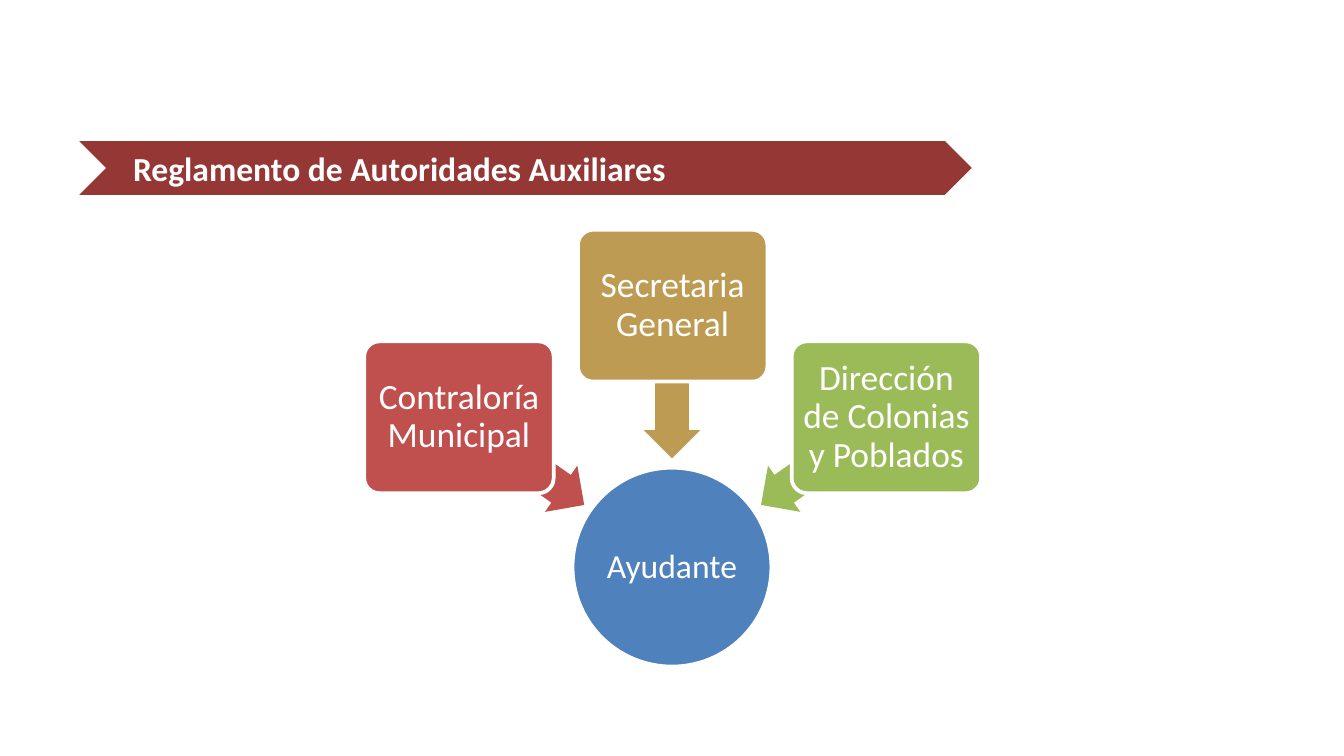
from pptx import Presentation
from pptx.dml.color import RGBColor
from pptx.enum.shapes import MSO_SHAPE
from pptx.enum.text import MSO_ANCHOR, MSO_AUTO_SIZE, PP_ALIGN
from pptx.util import Inches, Pt

WHITE = RGBColor(0xFF, 0xFF, 0xFF)
MAROON = RGBColor(0x95, 0x37, 0x35)
BLUE = RGBColor(0x4F, 0x81, 0xBD)
RED = RGBColor(0xC0, 0x50, 0x4D)
GOLD = RGBColor(0xBD, 0x9B, 0x53)
GREEN = RGBColor(0x9B, 0xBB, 0x59)

BOX_W, BOX_H = 1.41, 1.13
ARROW_W, ARROW_H = 1.14, 0.42

# text, colour, box left and top, arrow left and top, arrow rotation
OFFICES = [
    ("Contraloría Municipal", RED, 2.71, 2.54, 3.31, 3.22, 215),
    ("Secretaria General", GOLD, 4.3, 1.71, 4.43, 2.63, 270),
    ("Dirección de Colonias y Poblados", GREEN, 5.89, 2.54, 5.56, 3.22, 325),
]


def add_filled(shapes, kind, x, y, w, h, color, outlined=False):
    sp = shapes.add_shape(kind, Inches(x), Inches(y), Inches(w), Inches(h))
    sp.shadow.inherit = False
    sp.fill.solid()
    sp.fill.fore_color.rgb = color
    if outlined:
        sp.line.color.rgb = WHITE
        sp.line.width = Pt(2)
    else:
        sp.line.fill.background()
    return sp


def add_run(p, text, size, bold=False):
    r = p.add_run()
    r.text = text
    r.font.name = "Calibri"
    r.font.size = Pt(size)
    r.font.bold = bold
    r.font.color.rgb = WHITE


def set_centred_text(sp, text, size, inset):
    tf = sp.text_frame
    tf.word_wrap = True
    tf.vertical_anchor = MSO_ANCHOR.MIDDLE
    tf.margin_left = tf.margin_right = Inches(inset)
    tf.margin_top = tf.margin_bottom = Inches(inset)
    p = tf.paragraphs[0]
    p.alignment = PP_ALIGN.CENTER
    p.line_spacing = 0.9
    add_run(p, text, size)


def add_title(shapes, text):
    sp = add_filled(shapes, MSO_SHAPE.CHEVRON, 0.59, 1.05, 6.64, 0.4, MAROON)
    tf = sp.text_frame
    tf.word_wrap = True
    tf.auto_size = MSO_AUTO_SIZE.SHAPE_TO_FIT_TEXT
    tf.vertical_anchor = MSO_ANCHOR.TOP
    tf.margin_left = Inches(0.2)
    p = tf.paragraphs[0]
    p.alignment = PP_ALIGN.LEFT
    add_run(p, text, 18, bold=True)


def add_hub(shapes, text):
    sp = add_filled(shapes, MSO_SHAPE.OVAL, 4.26, 3.48, 1.48, 1.48, BLUE, outlined=True)
    set_centred_text(sp, text, 18, 0.01)


def add_office(shapes, text, color, x, y, arrow_x, arrow_y, rotation):
    """Add an arrow towards the hub and the box it starts from."""
    arrow = add_filled(shapes, MSO_SHAPE.LEFT_ARROW, arrow_x, arrow_y,
                       ARROW_W, ARROW_H, color)
    arrow.adjustments[0] = 0.6
    arrow.adjustments[1] = 0.5
    arrow.rotation = rotation
    box = add_filled(shapes, MSO_SHAPE.ROUNDED_RECTANGLE, x, y,
                     BOX_W, BOX_H, color, outlined=True)
    box.adjustments[0] = 0.1
    set_centred_text(box, text, 19, 0.04)


def main():
    prs = Presentation()
    prs.slide_width = Inches(10)
    prs.slide_height = Inches(10 * 9 / 16)
    s = prs.slides.add_slide(prs.slide_layouts[6])
    add_title(s.shapes, "Reglamento de Autoridades Auxiliares")
    diagram = s.shapes.add_group_shape()
    add_hub(diagram.shapes, "Ayudante")
    for office in OFFICES:
        add_office(diagram.shapes, *office)
    prs.save("out.pptx")


if __name__ == "__main__":
    main()
